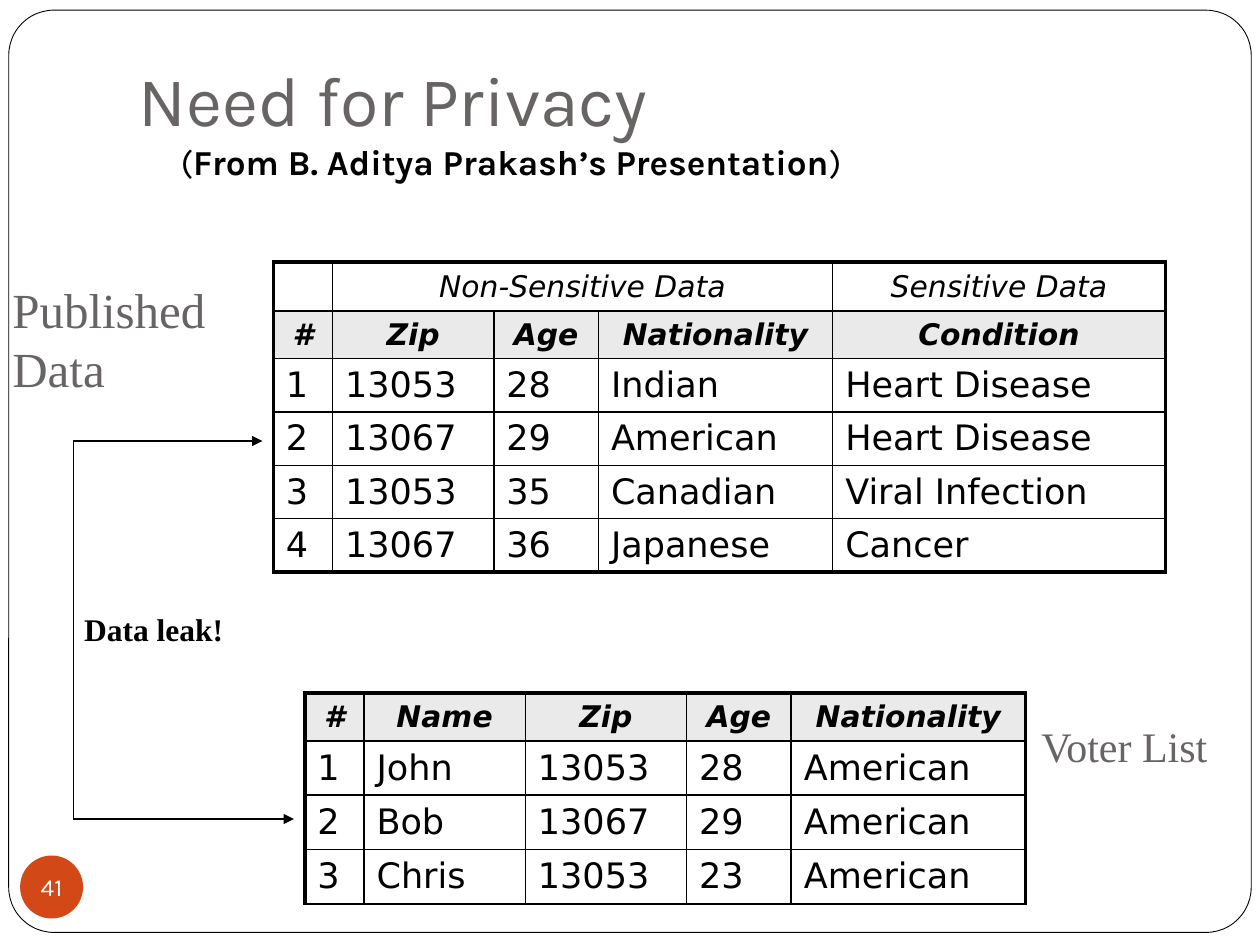
from lxml.etree import SubElement
from pptx import Presentation
from pptx.dml.color import RGBColor
from pptx.enum.shapes import MSO_CONNECTOR, MSO_SHAPE
from pptx.enum.text import MSO_ANCHOR, MSO_AUTO_SIZE, PP_ALIGN
from pptx.oxml.ns import qn
from pptx.util import Pt

COLORS = {"ink": "000000", "paper": "FFFFFF", "gray": "696464",
          "accent": "D34817", "header": "EAEAEA"}
TITLE, TABLE, LABEL = "Karla", "DejaVu Sans", "Times New Roman"
THIN, THICK = 1, 2.25


class Deck:
    """Holds the presentation, the current slide and its style."""

    def __init__(self, width, height):
        self.prs = Presentation()
        self.prs.slide_width, self.prs.slide_height = Pt(width), Pt(height)
        self.s = self.prs.slides.add_slide(self.prs.slide_layouts[5])

    def color(self, name):
        return RGBColor.from_string(COLORS[name])

    def run(self, p, text, font, size, color="ink", **fmt):
        r = p.add_run()
        r.text = text
        r.font.color.rgb = self.color(color)
        for key, value in {"name": font, "size": Pt(size), **fmt}.items():
            setattr(r.font, key, value)

    def frame(self, tf, **fmt):
        for key, value in {"auto_size": MSO_AUTO_SIZE.NONE, **fmt}.items():
            setattr(tf, key, value)

    def title(self, box, heading, credit):
        sp = self.s.shapes.title
        sp.left, sp.top, sp.width, sp.height = map(Pt, box)
        tf = sp.text_frame
        self.frame(tf, vertical_anchor=MSO_ANCHOR.BOTTOM, word_wrap=True,
                   margin_bottom=Pt(7.2))
        p = tf.paragraphs[0]
        p.alignment = PP_ALIGN.LEFT
        self.run(p, heading, TITLE, 40, "gray")
        p = tf.add_paragraph()
        p.alignment = PP_ALIGN.LEFT
        pPr = p._p.get_or_add_pPr()
        pPr.set("marL", str(Pt(24)))
        pPr.set("indent", "0")
        for text, bold in (("(", False), (credit, True), (")", False)):
            self.run(p, text, TITLE, 20, bold=bold)

    def shape(self, kind, box, fill, line=None):
        sp = self.s.shapes.add_shape(kind, *map(Pt, box))
        sp.shadow.inherit = False
        sp.fill.solid()
        sp.fill.fore_color.rgb = self.color(fill)
        if line:
            sp.line.color.rgb = self.color("ink")
            sp.line.width = Pt(line)
        else:
            sp.line.fill.background()
        return sp

    def page_border(self, box):
        sp = self.shape(MSO_SHAPE.ROUNDED_RECTANGLE, box, "paper", 0.5)
        sp.adjustments[0] = 0.049
        self.s.shapes.title.element.addprevious(sp.element)

    def page_number(self, box, number):
        tf = self.shape(MSO_SHAPE.OVAL, box, "accent").text_frame
        self.frame(tf, vertical_anchor=MSO_ANCHOR.MIDDLE, word_wrap=False,
                   margin_left=0, margin_right=0, margin_top=0, margin_bottom=0)
        tf.paragraphs[0].alignment = PP_ALIGN.CENTER
        self.run(tf.paragraphs[0], number, TITLE, 14, "paper")

    def label(self, box, lines, size, color, bold=False):
        tf = self.s.shapes.add_textbox(*map(Pt, box)).text_frame
        self.frame(tf, word_wrap=False)
        for i, text in enumerate(lines):
            p = tf.add_paragraph() if i else tf.paragraphs[0]
            self.run(p, text, LABEL, size, color, bold=bold)

    def line(self, start, end, arrow=False):
        cx = self.s.shapes.add_connector(MSO_CONNECTOR.STRAIGHT,
                                         *map(Pt, start + end))
        cx.line.color.rgb = self.color("ink")
        cx.line.width = Pt(0.75)
        if arrow:
            SubElement(cx.line._get_or_add_ln(), qn("a:tailEnd"), type="triangle")
        SubElement(cx.element.spPr, qn("a:effectLst"))

    def borders(self, cell, **widths):
        tcPr = cell._tc.get_or_add_tcPr()
        for side, width in widths.items():
            ln = SubElement(tcPr, qn(f"a:ln{side}"), w=str(Pt(width)))
            fill = SubElement(ln, qn("a:solidFill"))
            SubElement(fill, qn("a:srgbClr"), val=COLORS["ink"])

    def table(self, left, top, cols, heights, rows, header, closed=True):
        """Rows above index `header` are group captions; `closed` thickens the bottom."""
        table = self.s.shapes.add_table(len(rows), len(cols), Pt(left), Pt(top),
                                        Pt(sum(cols)), Pt(sum(heights))).table
        for col, width in zip(table.columns, cols):
            col.width = Pt(width)
        for i, (row, height) in enumerate(zip(rows, heights)):
            table.rows[i].height = Pt(height)
            for j, text in enumerate(row):
                cell = table.cell(i, j)
                self.borders(cell,
                             L=THIN if j else THICK,
                             R=THICK if j == len(cols) - 1 else THIN,
                             T=THIN if i else THICK,
                             B=THICK if closed and i == len(rows) - 1 else THIN)
                cell.fill.solid()
                cell.fill.fore_color.rgb = self.color(
                    "header" if i == header else "paper")
                cell.vertical_anchor = MSO_ANCHOR.MIDDLE
                p = cell.text_frame.paragraphs[0]
                head = i <= header
                size = 17 if head else 20
                p.alignment = PP_ALIGN.CENTER if head else PP_ALIGN.LEFT
                if text:
                    self.run(p, text, TABLE, size, bold=i == header, italic=head)
                else:
                    SubElement(p._p, qn("a:endParaRPr"), sz=str(size * 100))
        return table


def main():
    deck = Deck(720, 540)
    deck.page_border((5, 5.8, 710, 527))
    deck.title((72, 21.6, 612, 90), "Need for Privacy",
               "From B. Aditya Prakash’s Presentation")
    deck.page_number((11.5, 488.9, 36, 36), "41")

    number, zip_code, age, nation, condition = 33.8, 92.2, 59.8, 133.9, 190.1
    published = deck.table(
        156.2, 149.8, (number, zip_code, age, nation, condition),
        [27] * 2 + [30.5] * 4,
        [("", "Non-Sensitive Data", "", "", "Sensitive Data"),
         ("#", "Zip", "Age", "Nationality", "Condition"),
         ("1", "13053", "28", "Indian", "Heart Disease"),
         ("2", "13067", "29", "American", "Heart Disease"),
         ("3", "13053", "35", "Canadian", "Viral Infection"),
         ("4", "13067", "36", "Japanese", "Cancer")], header=1)
    published.cell(0, 1).merge(published.cell(0, 3))
    deck.table(
        174.2, 396, (number, zip_code, zip_code, age, nation),
        [27.3] + [31.1] * 3,
        [("#", "Name", "Zip", "Age", "Nationality"),
         ("1", "John", "13053", "28", "American"),
         ("2", "Bob", "13067", "29", "American"),
         ("3", "Chris", "13053", "23", "American")], header=0, closed=False)

    corner_top, corner_bottom = (42, 252), (42, 468)
    deck.line(corner_top, (150, 252), arrow=True)
    deck.line(corner_top, corner_bottom)
    deck.line(corner_bottom, (168, 468), arrow=True)

    deck.label((0, 156, 137.5, 74), ["Published", "Data"], 28, "gray")
    deck.label((588, 408, 116, 36), ["Voter List"], 24, "gray")
    deck.label((41, 345, 99.5, 29), ["Data leak!"], 18, "ink", bold=True)
    deck.prs.save("out.pptx")


if __name__ == "__main__":
    main()
